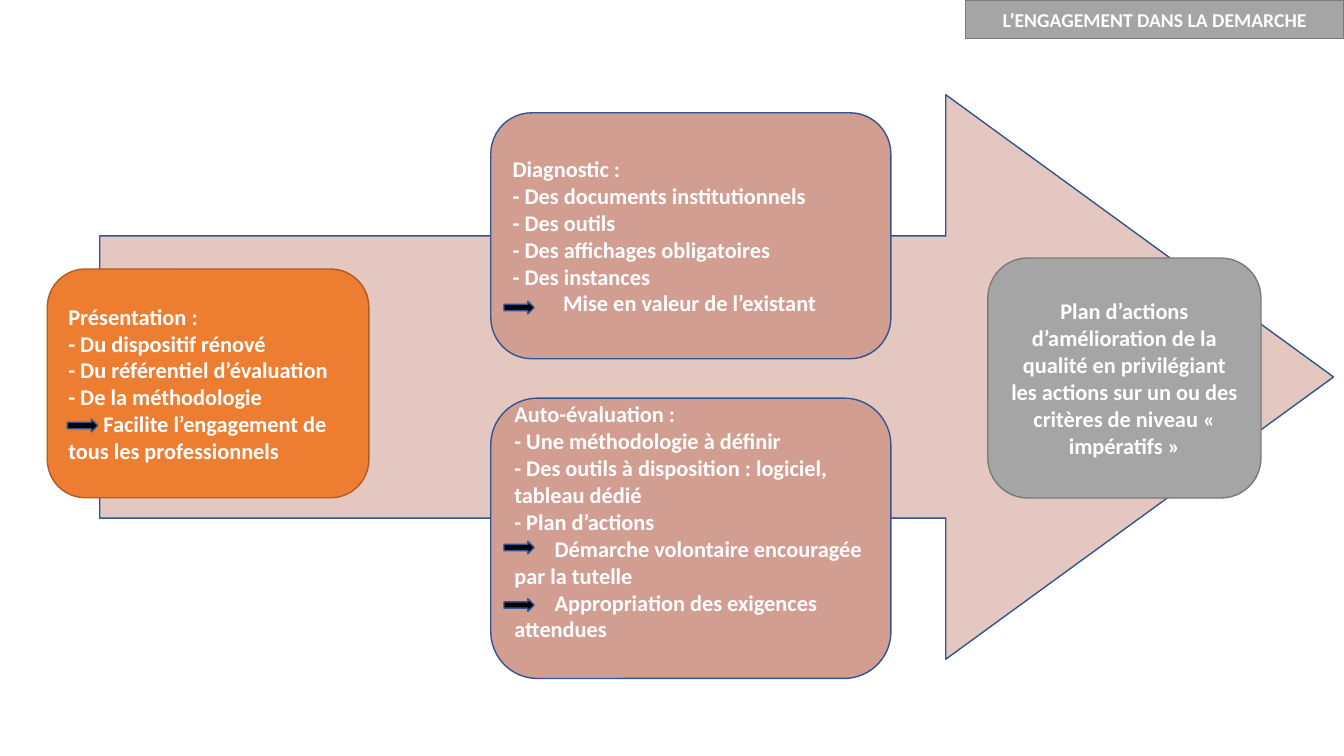
from pptx import Presentation
from pptx.dml.color import RGBColor
from pptx.enum.shapes import MSO_SHAPE
from pptx.enum.text import MSO_ANCHOR, MSO_AUTO_SIZE, PP_ALIGN
from pptx.util import Pt

ROUNDED, ARROW = MSO_SHAPE.ROUNDED_RECTANGLE, MSO_SHAPE.RIGHT_ARROW
MIDDLE, NO_AUTOFIT = MSO_ANCHOR.MIDDLE, MSO_AUTO_SIZE.NONE
LEFT, CENTER = PP_ALIGN.LEFT, PP_ALIGN.CENTER

TITLE_ONLY = 5
FONT = "Calibri"
WHITE, BLACK, NAVY = "FFFFFF", "000000", "325491"
ORANGE, RUST = "ED7D31", "AF5C24"
PALE_ROSE, ROSE = "E5C7C1", "D29E92"
GRAY, DARK_GRAY = "A5A5A5", "7A7A7A"


def color(hex_value):
    return RGBColor.from_string(hex_value)


def paint(part, fill, line):
    part.fill.solid()
    part.fill.fore_color.rgb = color(fill)
    part.line.color.rgb = color(line)
    part.line.width = Pt(1)


def add_part(slide, kind, box, fill, line):
    part = slide.shapes.add_shape(kind, *map(Pt, box))
    part.shadow.inherit = False
    paint(part, fill, line)
    return part


def write(part, lines, size, align, conclusion_indent=0):
    """Lines starting with '>' are conclusions, indented to clear their arrow."""
    frame = part.text_frame
    frame.word_wrap = True
    frame.auto_size = NO_AUTOFIT
    frame.vertical_anchor = MIDDLE
    for i, line in enumerate(lines):
        paragraph = frame.paragraphs[0] if i == 0 else frame.add_paragraph()
        paragraph.alignment = align
        if line.startswith(">"):
            paragraph._p.get_or_add_pPr().set("indent", str(Pt(conclusion_indent)))
        run = paragraph.add_run()
        run.text = line.lstrip(">")
        run.font.name = FONT
        run.font.size = Pt(size)
        run.font.bold = True
        run.font.color.rgb = color(WHITE)


# Heading tag in the top right corner
def add_heading(slide, box, text):
    heading = slide.shapes.title
    heading.left, heading.top, heading.width, heading.height = map(Pt, box)
    paint(heading, GRAY, DARK_GRAY)
    write(heading, [text], 14, CENTER)


# Large arrow behind the steps
def add_process_arrow(slide, box):
    process = add_part(slide, ARROW, box, PALE_ROSE, NAVY)
    process.adjustments[0] = 0.5
    process.adjustments[1] = 0.687


# One step, with small arrows beside its conclusions
def add_step(slide, box, lines, fill, line, align=LEFT, indent=0,
             arrow_x=0, arrow_tops=(), raised=False):
    step = add_part(slide, ROUNDED, box, fill, line)
    write(step, lines, 16, align, indent)
    if raised:
        step.text_frame.margin_top = Pt(0)
        step.text_frame.margin_bottom = Pt(24)
    left, top = box[:2]
    for arrow_top in arrow_tops:
        add_part(slide, ARROW, (left + arrow_x, top + arrow_top, 21.6, 9),
                 BLACK, NAVY)


def add_engagement_slide(prs):
    slide = prs.slides.add_slide(prs.slide_layouts[TITLE_ONLY])
    add_heading(slide, (689.8, 0, 270.2, 27.4), "L’ENGAGEMENT DANS LA DEMARCHE")
    add_process_arrow(slide, (71.3, 67.7, 881.3, 403.2))

    add_step(slide, (33.8, 192.2, 229.7, 163.4), [
        "Présentation :",
        "- Du dispositif rénové",
        "- Du référentiel d’évaluation",
        "- De la méthodologie",
        ">Facilite l’engagement de tous les professionnels",
    ], ORANGE, RUST, indent=25, arrow_x=14.4, arrow_tops=[107.3])

    # Both middle steps share their left edge and width
    middle_left, middle_width = 350.6, 285.8
    add_step(slide, (middle_left, 80.6, middle_width, 175.7), [
        "Diagnostic :",
        "- Des documents institutionnels",
        "- Des outils",
        "- Des affichages obligatoires",
        "- Des instances",
        ">Mise en valeur de l’existant",
    ], ROSE, NAVY, indent=36, arrow_x=9.4, arrow_tops=[134.6])
    add_step(slide, (middle_left, 284.4, middle_width, 200.2), [
        "Auto-évaluation :",
        "- Une méthodologie à définir",
        "- Des outils à disposition : logiciel, tableau dédié",
        "- Plan d’actions",
        ">Démarche volontaire encouragée par la tutelle",
        ">Appropriation des exigences attendues",
    ], ROSE, NAVY, indent=28.8, arrow_x=9.4, arrow_tops=[102.2, 143.3],
        raised=True)

    add_step(slide, (705.6, 184.3, 195.1, 171.4), [
        "Plan d’actions d’amélioration de la qualité en privilégiant "
        "les actions sur un ou des critères de niveau « impératifs »",
    ], GRAY, DARK_GRAY, align=CENTER)


def main():
    prs = Presentation()
    prs.slide_width, prs.slide_height = Pt(960), Pt(540)
    add_engagement_slide(prs)
    prs.save("out.pptx")


if __name__ == "__main__":
    main()
